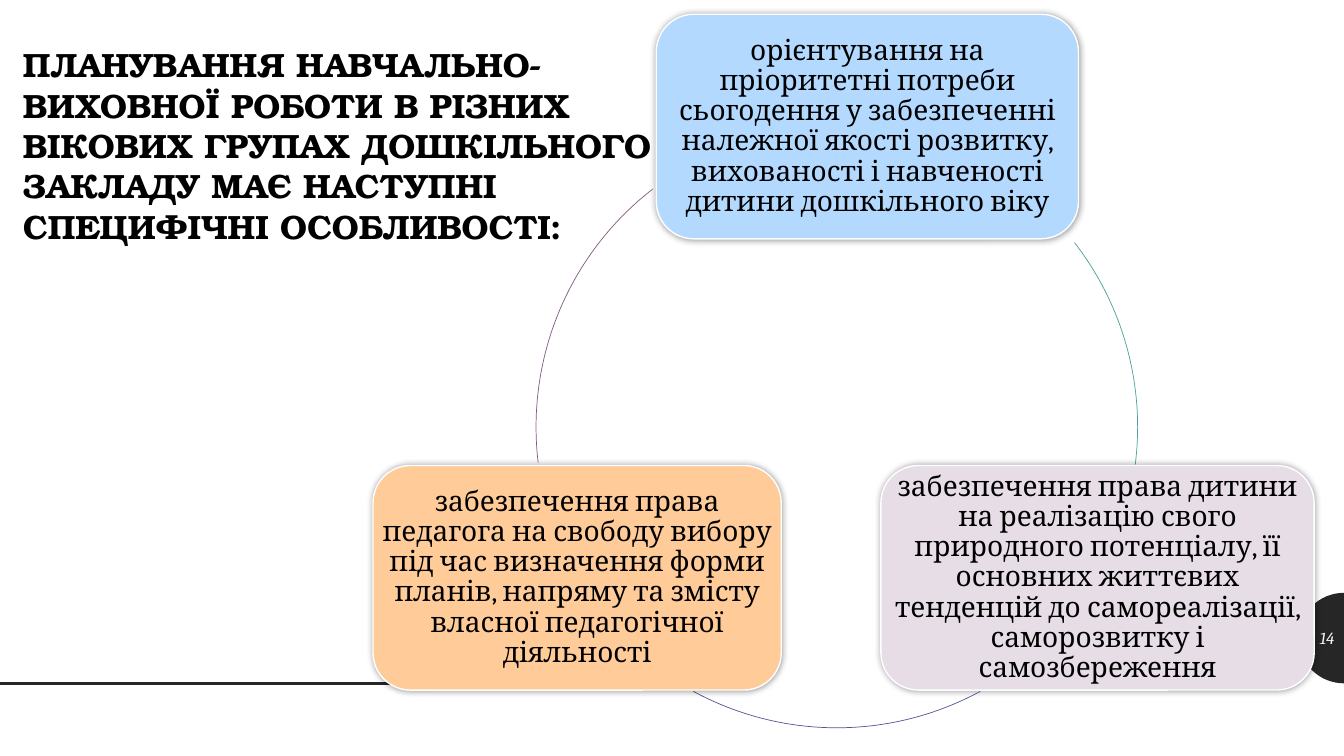
"""Build the slide on the features of planning in a preschool, with three cards on a circle."""
from math import cos, pi, sin

from lxml.etree import SubElement
from pptx import Presentation
from pptx.dml.color import RGBColor
from pptx.enum.shapes import MSO_CONNECTOR, MSO_SHAPE
from pptx.enum.text import MSO_ANCHOR as ANCHOR, PP_ALIGN as ALIGN
from pptx.oxml.ns import qn
from pptx.util import Cm, Pt

BLACK = RGBColor(0x00, 0x00, 0x00)
WHITE = RGBColor(0xFF, 0xFF, 0xFF)
DARK = RGBColor(0x26, 0x26, 0x26)
PALE = RGBColor(0xF5, 0xF5, 0xF5)
BLUE = RGBColor(0xB3, 0xD9, 0xFF)
LILAC = RGBColor(0xE7, 0xDD, 0xE7)
ORANGE = RGBColor(0xFF, 0xCC, 0x99)
TEAL = RGBColor(0x4C, 0xA1, 0x98)
INDIGO = RGBColor(0x54, 0x56, 0x92)
PLUM = RGBColor(0x83, 0x5B, 0x82)


def add_text(slide, box, text, size, color, font_name="Cambria", align=ALIGN.LEFT, anchor=ANCHOR.TOP):
    """Add a wrapped text box and return its frame, paragraph and run."""
    frame = slide.shapes.add_textbox(*map(Cm, box)).text_frame
    frame.word_wrap = True
    frame.vertical_anchor = anchor
    paragraph = frame.paragraphs[0]
    paragraph.alignment = align
    run = paragraph.add_run()
    run.text = text
    run.font.name = font_name
    run.font.size = Pt(size)
    run.font.color.rgb = color
    return frame, paragraph, run


def add_glow(shape):
    """Add a soft dark shadow around a shape."""
    shape.shadow.inherit = False
    effects = shape._element.spPr.find(qn("a:effectLst"))
    shadow = SubElement(effects, qn("a:outerShdw"), blurRad=str(Pt(5)), dist="0", dir="0", rotWithShape="0")
    color = SubElement(shadow, qn("a:srgbClr"), val=str(BLACK))
    SubElement(color, qn("a:alpha"), val="40000")


presentation = Presentation()
presentation.slide_width = Cm(33.87)
presentation.slide_height = Cm(19.05)
slide = presentation.slides.add_slide(presentation.slide_layouts[6])

center_x, center_y, radius, steps = 33.87, 16.08, 1.14, 32
rim = []
for step in range(steps + 1):
    angle = pi / 2 + pi * step / steps
    rim.append((Cm(center_x + radius * cos(angle)), Cm(center_y + radius * sin(angle))))
builder = slide.shapes.build_freeform(*rim[0])
builder.add_line_segments(rim[1:], close=True)
badge = builder.convert_to_shape()
badge.shadow.inherit = False
badge.fill.solid()
badge.fill.fore_color.rgb = DARK
badge.line.fill.background()

rule = slide.shapes.add_connector(MSO_CONNECTOR.STRAIGHT, Cm(0), Cm(17.22), Cm(12.5), Cm(17.22))
rule.line.color.rgb = DARK
rule.line.width = Pt(2)
SubElement(rule._element.spPr, qn("a:effectLst"))

_, _, number = add_text(slide, (32.74, 15.57, 1.14, 1.02), "14", 12, PALE,
                        align=ALIGN.RIGHT, anchor=ANCHOR.MIDDLE)
number.font.italic = True

_, _, title = add_text(
    slide, (0.33, 0.99, 16.43, 5.38),
    "ПЛАНУВАННЯ НАВЧАЛЬНО-ВИХОВНОЇ РОБОТИ В РІЗНИХ ВІКОВИХ ГРУПАХ ДОШКІЛЬНОГО "
    "ЗАКЛАДУ МАЄ НАСТУПНІ СПЕЦИФІЧНІ ОСОБЛИВОСТІ:",
    24, BLACK, "TeX Gyre Bonum")
title.font.bold = True

CARD_HEIGHT = 5.66
cards = [
    (16.54, 0.36, 10.64, BLUE, TEAL, 322.2, 7.2,
     "орієнтування на пріоритетні потреби сьогодення у забезпеченні належної якості розвитку, "
     "вихованості і навченості дитини дошкільного віку"),
    (22.2, 11.73, 10.92, LILAC, INDIGO, 61.5, 118.5,
     "забезпечення права дитини на реалізацію свого природного потенціалу, її основних життєвих "
     "тенденцій до самореалізації, саморозвитку і самозбереження"),
    (9.4, 11.73, 10.29, ORANGE, PLUM, 173.2, 232.3,
     "забезпечення права педагога на свободу вибору під час визначення форми планів, напряму "
     "та змісту власної педагогічної діяльності"),
]
for left, top, width, fill_color, arc_color, start, end, text in cards:
    box = (left, top, width, CARD_HEIGHT)
    card = slide.shapes.add_shape(MSO_SHAPE.ROUNDED_RECTANGLE, *map(Cm, box))
    card.fill.solid()
    card.fill.fore_color.rgb = fill_color
    card.line.color.rgb = WHITE
    card.line.width = Pt(1)
    add_glow(card)

    frame, paragraph, _ = add_text(slide, box, text, 20, BLACK, align=ALIGN.CENTER, anchor=ANCHOR.MIDDLE)
    frame.margin_left = frame.margin_right = frame.margin_top = frame.margin_bottom = Cm(0.2)
    paragraph.line_spacing = 0.9

    arc = slide.shapes.add_shape(MSO_SHAPE.ARC, Cm(13.51), Cm(3.18), Cm(15.16), Cm(15.16))
    arc.adjustments[0] = start * 0.6
    arc.adjustments[1] = end * 0.6
    arc.shadow.inherit = False
    arc.fill.background()
    arc.line.color.rgb = arc_color
    arc.line.width = Pt(0.5)

presentation.save("out.pptx")
